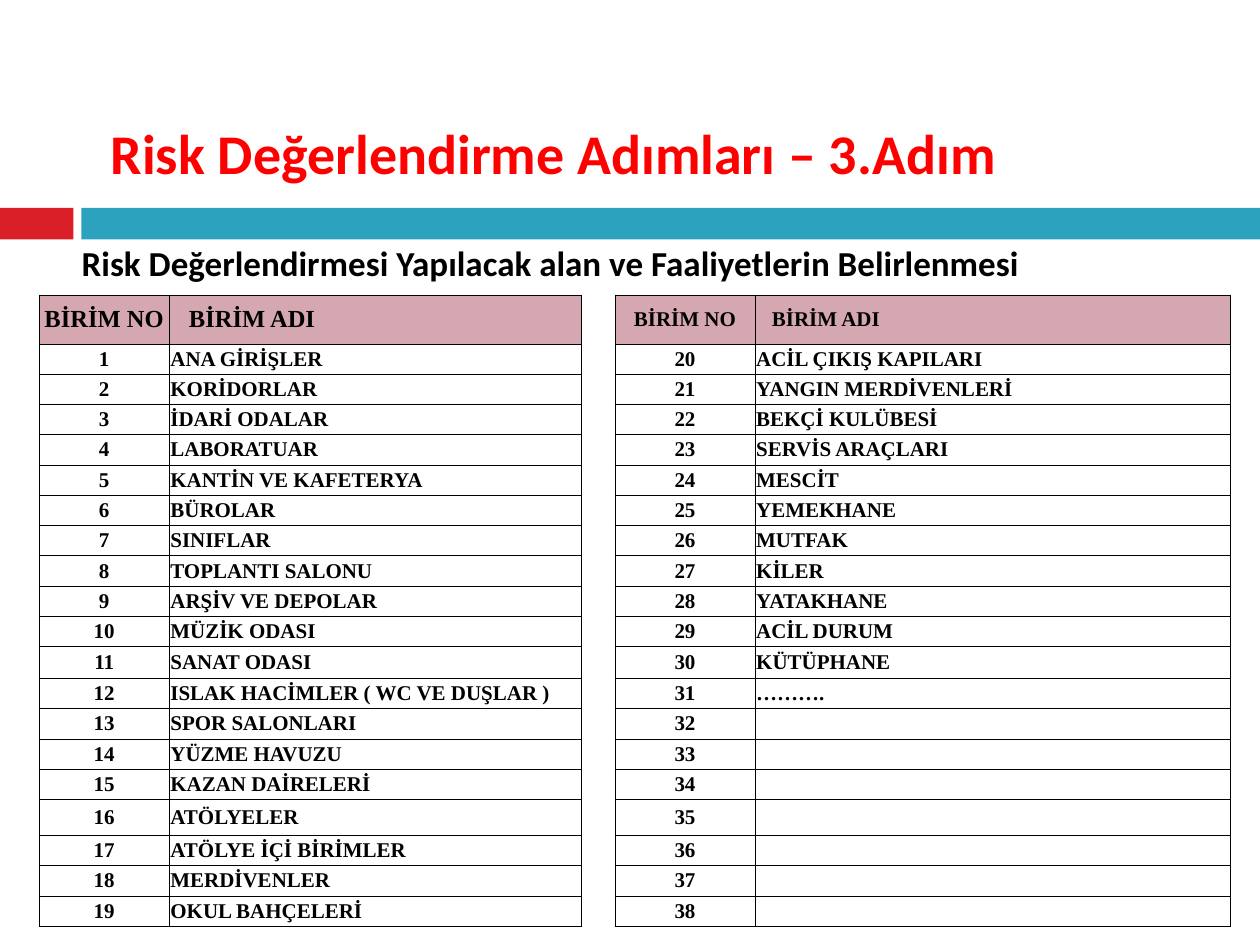
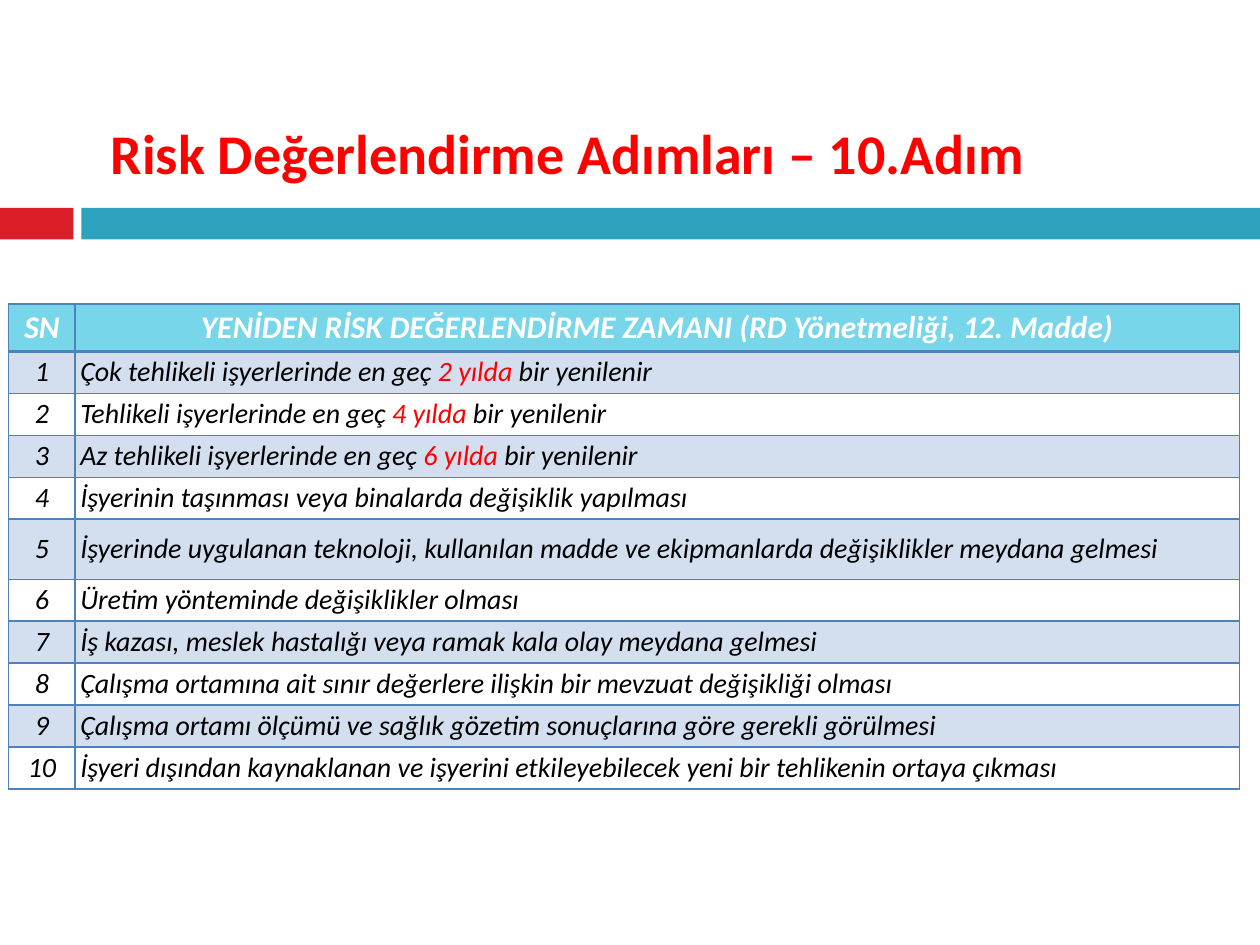
from itertools import zip_longest

from lxml.etree import SubElement
from pptx import Presentation
from pptx.dml.color import RGBColor
from pptx.enum.shapes import MSO_SHAPE
from pptx.enum.text import MSO_ANCHOR, PP_ALIGN
from pptx.oxml.ns import qn
from pptx.util import Pt

# Colours
RED = RGBColor(0xFF, 0x00, 0x00)
BLACK = RGBColor(0x00, 0x00, 0x00)
WHITE = RGBColor(0xFF, 0xFF, 0xFF)
BAND_RED = RGBColor(0xDA, 0x1F, 0x28)
BAND_TEAL = RGBColor(0x2D, 0xA2, 0xBF)
PINK = RGBColor(0xD5, 0xA7, 0xB1)
CYAN = RGBColor(0x78, 0xD6, 0xEA)
PALE_BLUE = RGBColor(0xD3, 0xDF, 0xEE)
GRID_BLUE = RGBColor(0x4F, 0x81, 0xBD)

# Text formats
TITLE = dict(name="Calibri", size=Pt(32), bold=True, color=RED)
SUBTITLE = dict(name="Calibri", size=Pt(20), bold=True, color=BLACK)
UNIT = dict(name="Times New Roman", size=Pt(12), bold=True, color=BLACK)
UNIT_HEAD = dict(UNIT, size=Pt(14))
RULE = dict(name="Calibri", size=Pt(16), italic=True, bold=False, color=BLACK)
RULE_HEAD = dict(RULE, size=Pt(18), bold=True, color=WHITE)

UNITS = [
    "ANA GİRİŞLER", "KORİDORLAR", "İDARİ ODALAR", "LABORATUAR",
    "KANTİN VE KAFETERYA", "BÜROLAR", "SINIFLAR", "TOPLANTI SALONU",
    "ARŞİV VE DEPOLAR", "MÜZİK ODASI", "SANAT ODASI",
    "ISLAK HACİMLER ( WC VE DUŞLAR )", "SPOR SALONLARI", "YÜZME HAVUZU",
    "KAZAN DAİRELERİ", "ATÖLYELER", "ATÖLYE İÇİ BİRİMLER", "MERDİVENLER",
    "OKUL BAHÇELERİ",
]
MORE_UNITS = [
    "ACİL ÇIKIŞ KAPILARI", "YANGIN MERDİVENLERİ", "BEKÇİ KULÜBESİ",
    "SERVİS ARAÇLARI", "MESCİT", "YEMEKHANE", "MUTFAK", "KİLER", "YATAKHANE",
    "ACİL DURUM", "KÜTÜPHANE", "……….",
]
# Bars enclose the words set in red
RENEWAL_RULES = [
    "Çok tehlikeli işyerlerinde en geç |2 yılda |bir yenilenir",
    "Tehlikeli işyerlerinde en geç |4 yılda |bir yenilenir",
    "Az tehlikeli işyerlerinde en geç |6 yılda |bir yenilenir",
    "İşyerinin taşınması veya binalarda değişiklik yapılması",
    "İşyerinde uygulanan teknoloji, kullanılan madde ve ekipmanlarda değişiklikler meydana gelmesi",
    "Üretim yönteminde değişiklikler olması",
    "İş kazası, meslek hastalığı veya ramak kala olay meydana gelmesi",
    "Çalışma ortamına ait sınır değerlere ilişkin bir mevzuat değişikliği olması",
    "Çalışma ortamı ölçümü ve sağlık gözetim sonuçlarına göre gerekli görülmesi",
    "İşyeri dışından kaynaklanan ve işyerini etkileyebilecek yeni bir tehlikenin ortaya çıkması",
]


def write(p, text, fmt):
    """Fill a paragraph; parts between bars turn red."""
    for i, part in enumerate(text.split("|")):
        r = p.add_run()
        r.text = part
        for key, value in fmt.items():
            if key == "color":
                r.font.color.rgb = RED if i % 2 else value
            else:
                setattr(r.font, key, value)


def add_text(s, text, box, fmt, anchor=MSO_ANCHOR.TOP):
    tf = s.shapes.add_textbox(*map(Pt, box)).text_frame
    tf.word_wrap = True
    tf.vertical_anchor = anchor
    write(tf.paragraphs[0], text, fmt)


def add_band(s, left, width, color):
    sp = s.shapes.add_shape(MSO_SHAPE.RECTANGLE, Pt(left), Pt(118.8), Pt(width), Pt(18))
    sp.shadow.inherit = False
    sp.fill.solid()
    sp.fill.fore_color.rgb = color
    sp.line.fill.background()


def add_slide(prs, title):
    """Blank slide with the shared bands and title."""
    s = prs.slides.add_slide(prs.slide_layouts[6])
    add_band(s, 0, 42, BAND_RED)
    add_band(s, 46.5, 673.5, BAND_TEAL)
    add_text(s, title, (56.2, 33.8, 596.2, 106.6), TITLE, MSO_ANCHOR.MIDDLE)
    return s


def set_borders(cell, color, **widths):
    """Draw the sides L, R, T, B; a width of 0 hides the side."""
    tcPr = cell._tc.get_or_add_tcPr()
    for side, width in widths.items():
        ln = SubElement(tcPr, qn(f"a:ln{side}"), w=str(Pt(width)))
        if width:
            fill = SubElement(ln, qn("a:solidFill"))
            SubElement(fill, qn("a:srgbClr"), val=str(color))
        else:
            SubElement(ln, qn("a:noFill"))


def fill_cell(cell, text, fmt, fill=None, center=False, margin=0.7):
    cell.vertical_anchor = MSO_ANCHOR.MIDDLE
    cell.margin_left, cell.margin_right = Pt(margin), Pt(0.7)
    cell.margin_top = cell.margin_bottom = 0
    if center:
        cell.margin_right = cell.margin_left
    if fill is None:
        cell.fill.background()
    else:
        cell.fill.solid()
        cell.fill.fore_color.rgb = fill
    p = cell.text_frame.paragraphs[0]
    p.alignment = PP_ALIGN.CENTER if center else PP_ALIGN.LEFT
    if text:
        write(p, text, fmt)
    else:
        # An empty cell keeps the text size, so its row does not grow
        SubElement(p._p, qn("a:endParaRPr"), sz=str(int(fmt["size"].pt * 100)))


def add_grid(s, left, top, cols, rows):
    table = s.shapes.add_table(len(rows), len(cols), Pt(left), Pt(top),
                               Pt(sum(cols)), Pt(sum(rows))).table
    for col, width in zip(table.columns, cols):
        col.width = Pt(width)
    for row, height in zip(table.rows, rows):
        row.height = Pt(height)
    return table


def add_unit_table(s):
    """Two numbered lists side by side, with an open gap column."""
    heights = [28] + [17.3] * len(UNITS)
    heights[11], heights[16] = 18.2, 20.6
    table = add_grid(s, 22.4, 168.6, [74.3, 235.5, 19.3, 80, 271.5], heights)
    gap = 2

    for row in range(len(heights)):
        for col in range(5):
            edge = 0 if col == gap else 0.5
            set_borders(table.cell(row, col), BLACK, L=0.5, R=0.5, T=edge, B=edge)
        fill_cell(table.cell(row, gap), "", UNIT)

    for col, fmt, indent in ((0, UNIT_HEAD, 11.3), (3, UNIT, 9.7)):
        fill_cell(table.cell(0, col), "BİRİM NO", fmt, PINK, center=True)
        fill_cell(table.cell(0, col + 1), "BİRİM ADI", fmt, PINK, margin=indent)

    for row, names in enumerate(zip_longest(UNITS, MORE_UNITS, fillvalue=""), 1):
        for block, name in enumerate(names):
            col = 3 * block
            number = row + block * len(UNITS)
            fill_cell(table.cell(row, col), str(number), UNIT, center=True)
            fill_cell(table.cell(row, col + 1), name, UNIT)


def add_renewal_table(s):
    heights = [27.2] + [24] * len(RENEWAL_RULES)
    heights[5] = 34.3
    table = add_grid(s, 5, 173.6, [38, 665.3], heights)
    heading = "YENİDEN RİSK DEĞERLENDİRME ZAMANI (RD Yönetmeliği, 12. Madde)"
    lines = [("SN", heading)]
    lines += [(str(n), rule) for n, rule in enumerate(RENEWAL_RULES, 1)]

    for row, (number, text) in enumerate(lines):
        head = row == 0
        fmt = RULE_HEAD if head else RULE
        fill = CYAN if head else PALE_BLUE if row % 2 else None
        for col in range(2):
            set_borders(table.cell(row, col), GRID_BLUE, L=1, R=1,
                        T=2.25 if row == 1 else 1, B=2.25 if head else 1)
        fill_cell(table.cell(row, 0), number, fmt, fill, center=True, margin=5)
        fill_cell(table.cell(row, 1), text, fmt, fill, center=head, margin=2.9)


def main():
    prs = Presentation()
    prs.slide_width, prs.slide_height = Pt(720), Pt(540)

    # Areas and activities
    s = add_slide(prs, "Risk Değerlendirme Adımları – 3.Adım")
    add_text(s, "Risk Değerlendirmesi Yapılacak alan ve Faaliyetlerin Belirlenmesi",
             (39.6, 134.6, 680.4, 31.7), SUBTITLE)
    add_unit_table(s)

    # Renewal of the assessment
    s = add_slide(prs, "Risk Değerlendirme Adımları – 10.Adım")
    add_renewal_table(s)

    prs.save("out.pptx")


if __name__ == "__main__":
    main()
